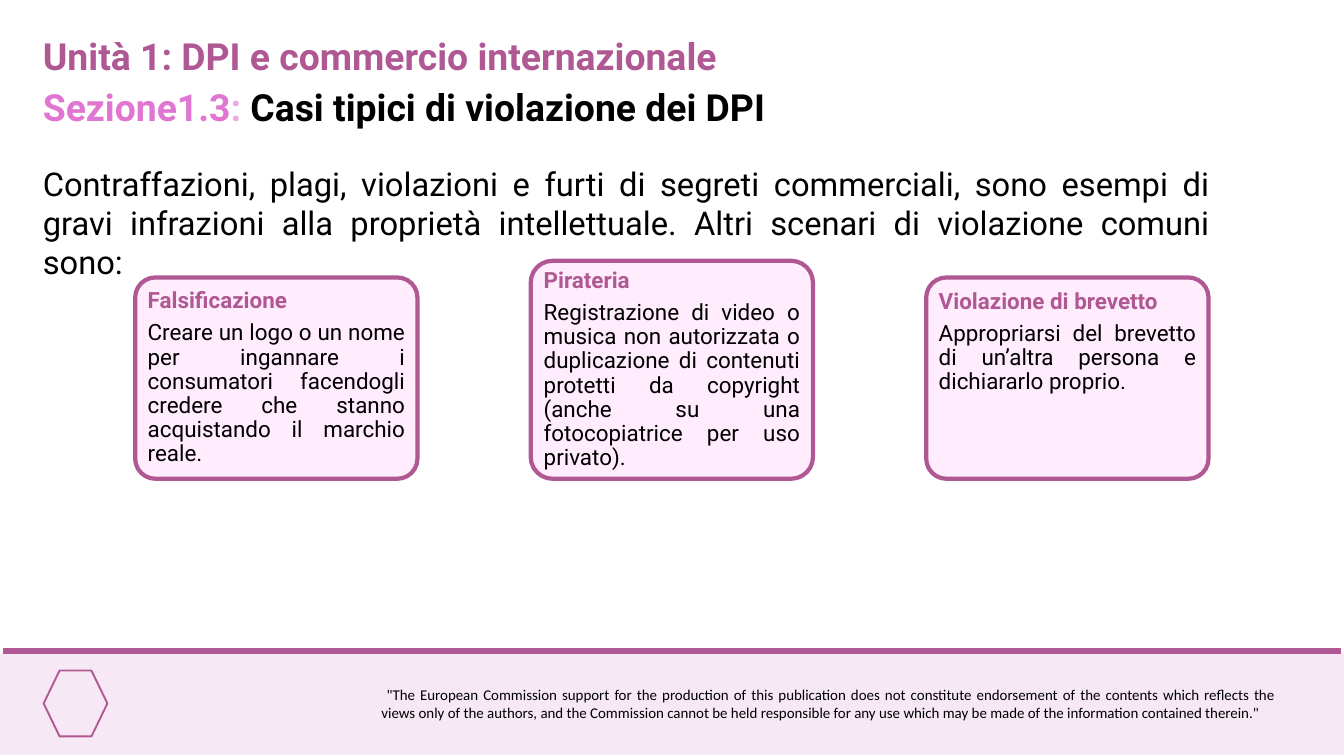
"""Build the slide on typical cases of intellectual property infringement."""
from lxml import etree
from pptx import Presentation
from pptx.dml.color import RGBColor
from pptx.enum.shapes import MSO_CONNECTOR, MSO_SHAPE
from pptx.enum.text import MSO_ANCHOR, MSO_AUTO_SIZE, PP_ALIGN
from pptx.oxml.ns import qn
from pptx.util import Cm, Pt

LEFT, JUSTIFY = PP_ALIGN.LEFT, PP_ALIGN.JUSTIFY
TOP, MIDDLE = MSO_ANCHOR.TOP, MSO_ANCHOR.MIDDLE
PURPLE = RGBColor(0xB0, 0x58, 0x94)
PINK = RGBColor(0xE0, 0x76, 0xD1)
PALE_PINK = RGBColor(0xEC, 0xAA, 0xE3)
CARD_FILL = RGBColor(0xFF, 0xEC, 0xFC)
BAND_FILL = RGBColor(0xF6, 0xE9, 0xF5)
BLACK = RGBColor(0, 0, 0)


def add_run(p, text, size, color, bold=False, font="Roboto"):
    r = p.add_run()
    r.text = text
    r.font.name = font
    r.font.size = Pt(size)
    r.font.bold = bold
    r.font.color.rgb = color


def add_text_box(s, left, top, width, height, align):
    sp = s.shapes.add_textbox(Cm(left), Cm(top), Cm(width), Cm(height))
    sp.text_frame.word_wrap = True
    p = sp.text_frame.paragraphs[0]
    p.alignment = align
    return p


prs = Presentation()
prs.slide_width, prs.slide_height = Cm(50.8), Cm(28.58)
s = prs.slides.add_slide(prs.slide_layouts[5])

title = s.shapes.title
title.left, title.top, title.width, title.height = Cm(1.37), Cm(1.12), Cm(25.98), Cm(1.96)
tf = title.text_frame
tf.word_wrap = False
tf.auto_size = MSO_AUTO_SIZE.NONE
tf.vertical_anchor = TOP
p = tf.paragraphs[0]
p.alignment = LEFT
add_run(p, "Unità 1: DPI e commercio internazionale", 40, PURPLE, True)

band = s.shapes.add_shape(MSO_SHAPE.RECTANGLE, 0, Cm(24.69), prs.slide_width, Cm(3.84))
band.shadow.inherit = False
band.fill.solid()
band.fill.fore_color.rgb = BAND_FILL
band.line.fill.background()

rule = s.shapes.add_connector(MSO_CONNECTOR.STRAIGHT, Cm(0.13), Cm(24.61), Cm(50.67), Cm(24.61))
rule.line.color.rgb = PURPLE
rule.line.width = Pt(6.75)
etree.SubElement(rule.line._get_or_add_ln().getparent(), qn("a:effectLst"))

emblem = s.shapes.add_shape(MSO_SHAPE.HEXAGON, Cm(1.65), Cm(25.35), Cm(2.41), Cm(2.49))
emblem.shadow.inherit = False
emblem.fill.background()
emblem.line.color.rgb = PURPLE
emblem.line.width = Pt(2)

p = add_text_box(s, 14.17, 25.78, 34.29, 1.63, JUSTIFY)
add_run(p, " \"The European Commission support for the production of this publication does not "
        "constitute endorsement of the contents which reflects the views only of the authors, "
        "and the Commission cannot be held responsible for any use which may be made of the "
        "information contained therein.\"", 16, BLACK, font="Calibri")

p = add_text_box(s, 1.37, 3.07, 37.77, 1.96, LEFT)
add_run(p, "Sezione1.3", 40, PINK, True)
add_run(p, ": ", 40, PALE_PINK, True)
add_run(p, "Casi tipici di violazione dei DPI", 40, BLACK, True)

p = add_text_box(s, 1.37, 6.07, 44.65, 3.25, JUSTIFY)
add_run(p, "Contraffazioni, plagi, violazioni e furti di segreti commerciali, sono esempi di "
        "gravi infrazioni alla proprietà intellettuale. Altri scenari di violazione comuni "
        "sono:", 35, BLACK)

cards = [
    ("Falsificazione",
     "Creare un logo o un nome per ingannare i consumatori facendogli credere che stanno "
     "acquistando il marchio reale. ", 10.49, MIDDLE),
    ("Pirateria",
     "Registrazione di video o musica non autorizzata o duplicazione di contenuti protetti "
     "da copyright (anche su una fotocopiatrice per uso privato).", 9.86, MIDDLE),
    ("Violazione di brevetto",
     "Appropriarsi del brevetto di un’altra persona e dichiararlo proprio.", 10.49, TOP),
]
card_bottom = 18.1
for i, (heading, body, top, anchor) in enumerate(cards):
    card = s.shapes.add_shape(MSO_SHAPE.ROUNDED_RECTANGLE, Cm(5.11 + 14.95 * i), Cm(top),
                              Cm(10.67), Cm(card_bottom - top))
    card.adjustments[0] = 0.1
    card.shadow.inherit = False
    card.fill.solid()
    card.fill.fore_color.rgb = CARD_FILL
    card.line.color.rgb = PURPLE
    card.line.width = Pt(4.5)
    tf = card.text_frame
    tf.word_wrap = True
    tf.vertical_anchor = anchor
    tf.margin_left = tf.margin_right = tf.margin_top = tf.margin_bottom = Cm(0.25)
    p = tf.paragraphs[0]
    p.alignment = LEFT
    add_run(p, heading, 24, PURPLE, True)
    p = tf.add_paragraph()
    p.alignment = JUSTIFY
    add_run(p, body, 24, BLACK)
    for p in tf.paragraphs:
        p.line_spacing = 0.9
        p.space_after = Pt(8.4)

prs.save("out.pptx")
